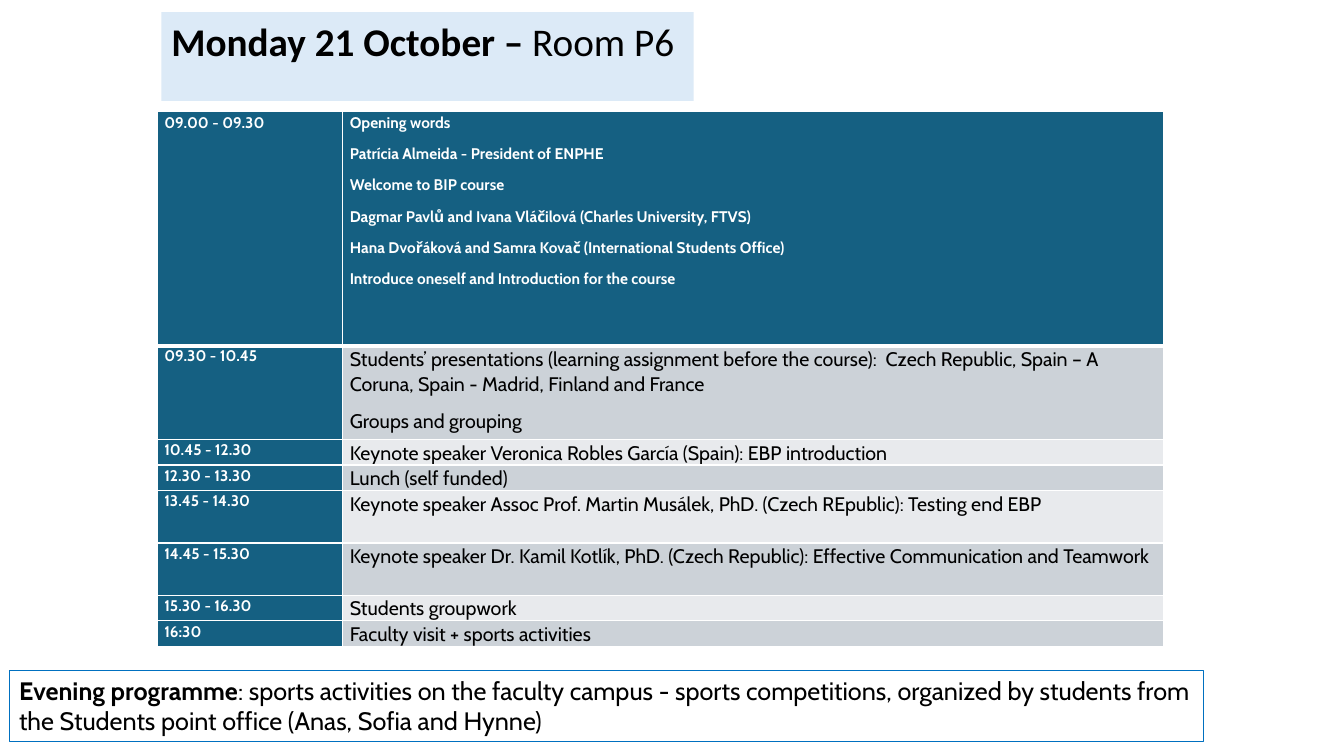
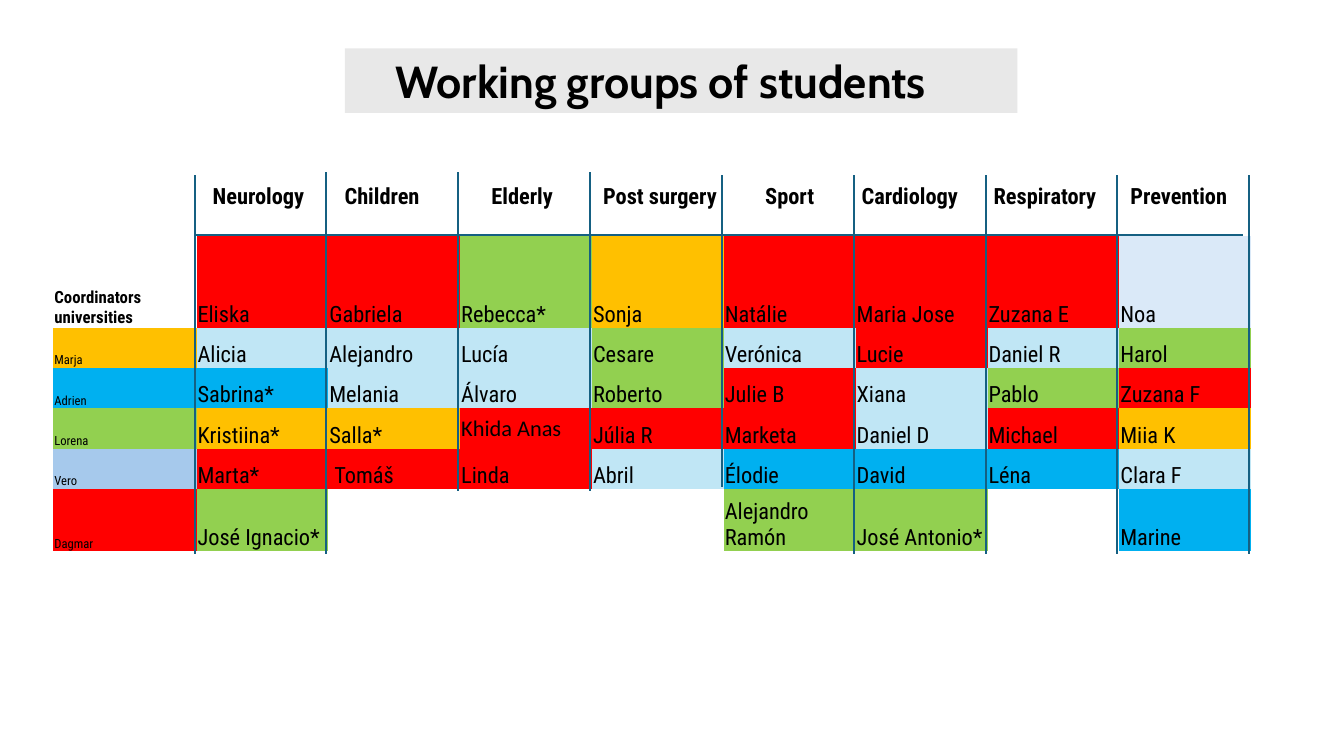
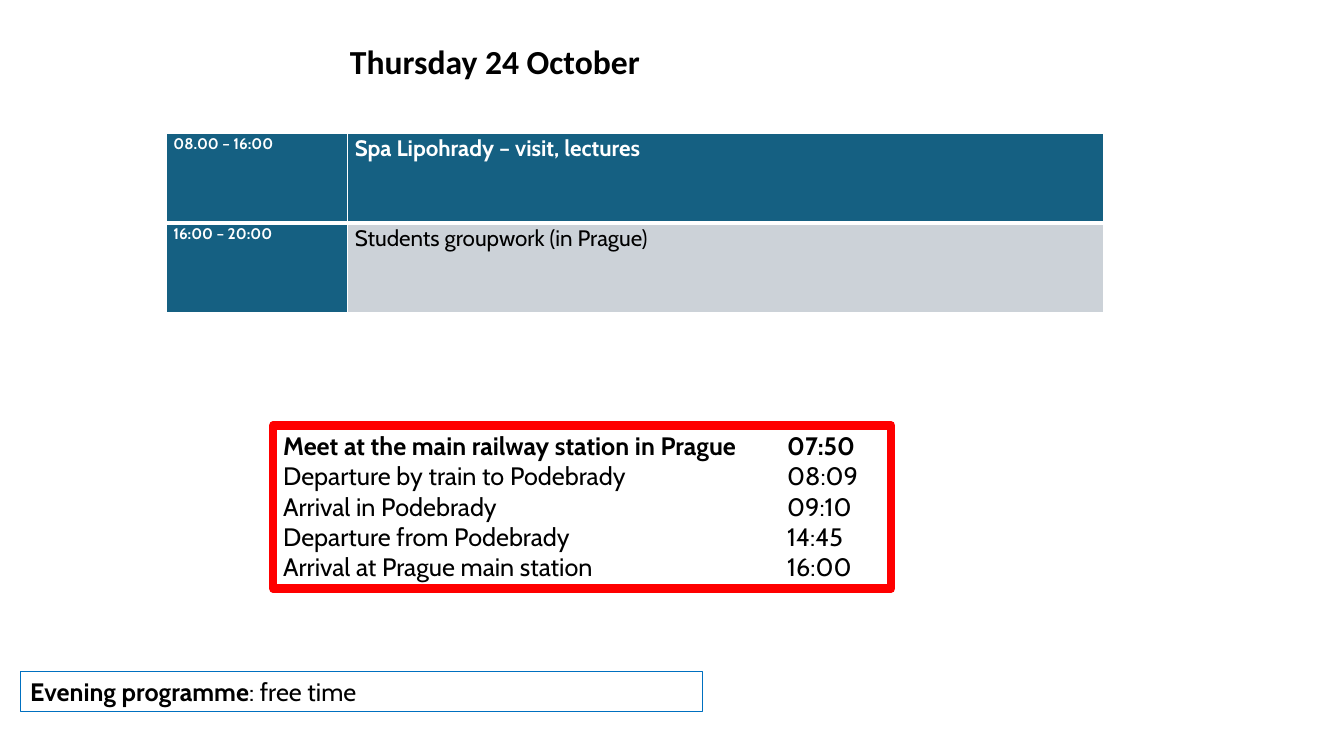
from lxml import etree
from pptx import Presentation
from pptx.dml.color import RGBColor
from pptx.enum import shapes, text
from pptx.oxml import ns
from pptx.util import Inches, Pt

COLORS = {
    "black": "000000", "white": "FFFFFF", "teal": "156082", "band": "CCD2D8",
    "pale": "E8EAED", "title_blue": "DCEAF7", "title_grey": "E8E8E8",
    "outline": "0070C0", "red": "FF0000", "green": "92D050", "amber": "FFC000",
    "sky": "C0E6F5", "blue": "00B0F0", "mist": "DAE9F8", "steel": "A6C9EC",
}
BODY, HEADING, GRID = "Cabin", "Calibri", "Roboto Condensed"
PLAIN_TABLE = "{2D5ABB26-0587-4C30-8999-92F81FD0307C}"

MONDAY = [
    (2.32, "09.00 - 09.30", [
        "Opening words",
        "Patrícia Almeida - President of ENPHE",
        "Welcome to BIP course",
        "Dagmar Pavlů and Ivana Vláčilová (Charles University, FTVS)",
        "Hana Dvořáková and Samra Kovač (International Students Office)",
        "Introduce oneself and Introduction for the course"]),
    (0.93, "09.30 - 10.45", [
        "Students’ presentations (learning assignment before the course):  "
        "Czech Republic, Spain – A Coruna, Spain - Madrid, Finland and France",
        "Groups and grouping"]),
    (0.25, "10.45 - 12.30", ["Keynote speaker Veronica Robles García (Spain): EBP introduction"]),
    (0.25, "12.30 - 13.30", ["Lunch (self funded)"]),
    (0.52, "13.45 - 14.30", [
        "Keynote speaker Assoc Prof. Martin Musálek, PhD. (Czech REpublic): Testing end EBP"]),
    (0.52, "14.45 - 15.30", [
        "Keynote speaker Dr. Kamil Kotlík, PhD. (Czech Republic): "
        "Effective Communication and Teamwork"]),
    (0.25, "15.30 - 16.30", ["Students groupwork"]),
    (0.25, "16:30", ["Faculty visit + sports activities"]),
]
MONDAY_EVENING = (
    ": sports activities on the faculty campus - sports competitions, organized by "
    "students from the Students point office (Anas, Sofia and Hynne)")

THURSDAY = [
    (0.89, "08.00 – 16:00", ["Spa Lipohrady – visit, lectures"]),
    (0.89, "16:00 – 20:00", ["Students groupwork (in Prague)"]),
]
TRAINS = [
    ("Meet at the main railway station in Prague", "07:50"),
    ("Departure by train to Podebrady", "08:09"),
    ("Arrival in Podebrady", "09:10"),
    ("Departure from Podebrady", "14:45"),
    ("Arrival at Prague main station", "16:00"),
]

TOPICS = [
    ("Neurology", 0.15), ("Children", 0.15), ("Elderly", 0.3), ("Post surgery", 0.1),
    ("Sport", 0.4), ("Cardiology", 0.05), ("Respiratory", 0.05), ("Prevention", 0.1),
]
GROUPS = [
    [("Coordinators universities", None), ("Eliska", "red"), ("Gabriela", "red"),
     ("Rebecca*", "green"), ("Sonja", "amber"), ("Natálie", "red"),
     ("Maria Jose", "red"), ("Zuzana E", "red"), ("Noa", "mist")],
    [("Marja", "amber"), ("Alicia", "sky"), ("Alejandro", "sky"), ("Lucía", "sky"),
     ("Cesare", "green"), ("Verónica", "sky"), ("Lucie", "red"), ("Daniel R", "sky"),
     ("Harol", "green")],
    [("Adrien", "blue"), ("Sabrina*", "blue"), ("Melania", "sky"), ("Álvaro", "sky"),
     ("Roberto", "green"), ("Julie B", "red"), ("Xiana", "sky"), ("Pablo", "green"),
     ("Zuzana F", "red")],
    [("Lorena", "green"), ("Kristiina*", "amber"), ("Salla*", "amber"),
     ("Khida Anas", "red"), ("Júlia R", "red"), ("Marketa", "red"),
     ("Daniel D", "sky"), ("Michael", "red"), ("Miia K", "amber")],
    [("Vero", "steel"), ("Marta*", "red"), ("Tomáš", "red"), ("Linda", "red"),
     ("Abril", "sky"), ("Élodie", "blue"), ("David", "blue"), ("Léna", "blue"),
     ("Clara F", "sky")],
    [("Dagmar", "red"), ("José Ignacio*", "green"), ("", None), ("", None), ("", None),
     ("Alejandro Ramón", "green"), ("José Antonio*", "green"), ("", None),
     ("Marine", "blue")],
    [("", None)] * 9,
]
GROUP_HEIGHTS = [0.89, 0.91, 0.4, 0.4, 0.4, 0.4, 0.62, 0.28]
COORDINATOR_WIDTH = 1.42
GROUP_WIDTH = (11.88 - COORDINATOR_WIDTH) / len(TOPICS)
RULE_SPANS = [(1.74, 5.5)] + [(1.71, 5.5)] + [(1.71, 4.87)] * 2 + [(1.74, 4.83)] + [(1.74, 5.5)] * 4


def rgb(color):
    return RGBColor.from_string(COLORS[color])


def style(font, name, size, color="black", bold=False):
    font.name, font.size, font.bold = name, Pt(size), bold
    font.color.rgb = rgb(color)


def paint(target, color):
    if color:
        target.fill.solid()
        target.fill.fore_color.rgb = rgb(color)
    else:
        target.fill.background()


def indent(paragraph, inches):
    paragraph._p.get_or_add_pPr().set("marL", str(Inches(inches)))


def add_slide(deck, title, at, size, font=HEADING, fill=None, extra="", left_indent=0):
    slide = deck.slides.add_slide(deck.slide_layouts[5])
    box = slide.shapes.title
    box.left, box.top, box.width, box.height = map(Inches, at)
    paint(box, fill)
    frame = box.text_frame
    frame.word_wrap = True
    frame.auto_size = text.MSO_AUTO_SIZE.NONE
    frame.vertical_anchor = text.MSO_ANCHOR.TOP
    frame.margin_right = 0
    paragraph = frame.paragraphs[0]
    paragraph.alignment = text.PP_ALIGN.LEFT
    indent(paragraph, left_indent)
    for words, bold in ((title, True), (extra, False)):
        if words:
            span = paragraph.add_run()
            span.text = words
            style(span.font, font, size, bold=bold)
    return slide


def add_frame(slide, at, color, width):
    box = slide.shapes.add_shape(shapes.MSO_SHAPE.RECTANGLE, *map(Inches, at))
    box.shadow.inherit = False
    box.fill.background()
    box.line.color.rgb = rgb(color)
    box.line.width = Pt(width)
    etree.SubElement(box.line._get_or_add_ln(), ns.qn("a:round"))
    box.text_frame.word_wrap = True
    box.text_frame.vertical_anchor = text.MSO_ANCHOR.TOP
    return box


def add_evening(slide, at, words):
    box = add_frame(slide, at, "outline", 0.75)
    para = box.text_frame.paragraphs[0]
    para.alignment = text.PP_ALIGN.LEFT
    for part, bold in (("Evening programme", True), (words, False)):
        span = para.add_run()
        span.text = part
        style(span.font, BODY, 18, bold=bold)


def add_grid(slide, left, top, widths, heights):
    table = slide.shapes.add_table(
        len(heights), len(widths), Inches(left), Inches(top),
        Inches(sum(widths)), Inches(sum(heights))).table
    table._tbl.tblPr.find(ns.qn("a:tableStyleId")).text = PLAIN_TABLE
    for column, width in zip(table.columns, widths):
        column.width = Inches(width)
    for row, height in zip(table.rows, heights):
        row.height = Inches(height)
    return table


def set_margins(cell, left, top, right, bottom):
    cell.margin_left, cell.margin_top = Inches(left), Inches(top)
    cell.margin_right, cell.margin_bottom = Inches(right), Inches(bottom)


def add_borders(cell, widths):
    properties = cell._tc.get_or_add_tcPr()
    for position, (side, width) in enumerate(widths.items()):
        line = etree.Element(ns.qn("a:" + side), w=str(Pt(width)))
        fill = etree.SubElement(line, ns.qn("a:solidFill"))
        etree.SubElement(fill, ns.qn("a:srgbClr"), val=COLORS["white"])
        properties.insert(position, line)


def add_schedule(slide, left, top, widths, schedule, head_size, body_size):
    table = add_grid(slide, left, top, widths, [height for height, _, _ in schedule])
    for row, (_, time, lines) in enumerate(schedule):
        header = row == 0
        body_fill = "teal" if header else ("band" if row % 2 else "pale")
        for column, (words, fill) in enumerate((([time], "teal"), (lines, body_fill))):
            cell = table.cell(row, column)
            paint(cell, fill)
            set_margins(cell, 0.07, 0, 0.07, 0)
            add_borders(cell, {"lnL": 1, "lnR": 1, "lnT": 3 if row == 1 else 1,
                               "lnB": 3 if header else 1})
            cell.text_frame.text = "\n".join(words)
            size = 11 if column == 0 else head_size if header else body_size
            on_teal = fill == "teal"
            for para in cell.text_frame.paragraphs:
                para.line_spacing = 1.07
                para.space_after = Pt(8)
                style(para.font, BODY, size, "white" if on_teal else "black", on_teal)


def fill_group_cell(cell, words, fill, size=16, bold=False, left_indent=0, bottom=0, font=GRID):
    paint(cell, fill)
    set_margins(cell, 0.01, 0.01, 0.01, bottom)
    cell.vertical_anchor = text.MSO_ANCHOR.BOTTOM
    cell.text_frame.text = words
    para = cell.text_frame.paragraphs[0]
    style(para.font, font, size, bold=bold)
    indent(para, left_indent)


def add_groups(slide):
    widths = [COORDINATOR_WIDTH] + [GROUP_WIDTH] * len(TOPICS)
    table = add_grid(slide, 0.53, 1.45, widths, GROUP_HEIGHTS)
    fill_group_cell(table.cell(0, 0), "", None)
    for column, (topic, left_indent) in enumerate(TOPICS, 1):
        fill_group_cell(table.cell(0, column), topic, None, bold=True,
                        left_indent=left_indent, bottom=0.26)
    for row, people in enumerate(GROUPS, 1):
        for column, (name, fill) in enumerate(people):
            cell = table.cell(row, column)
            heading = row == 1 and column == 0
            size = 12 if heading else 9 if column == 0 else 16
            fill_group_cell(cell, name, fill, size, heading,
                            0.05 if name == "Tomáš" else 0,
                            font=HEADING if name == "Khida Anas" else GRID)
            if name == "Khida Anas":
                cell.vertical_anchor = text.MSO_ANCHOR.MIDDLE


def add_rule(slide, *ends):
    rule = slide.shapes.add_connector(shapes.MSO_CONNECTOR.STRAIGHT, *map(Inches, ends))
    rule.line.color.rgb = rgb("teal")
    rule.line.width = Pt(1.5)
    etree.SubElement(rule._element.spPr, ns.qn("a:effectLst"))


def add_trains(slide):
    box = add_frame(slide, (2.71, 4.22, 6.13, 1.62), "red", 6)
    box.text_frame.text = "\n".join("\t".join(stop) for stop in TRAINS)
    for number, para in enumerate(box.text_frame.paragraphs):
        para.alignment = text.PP_ALIGN.LEFT
        style(para.font, BODY, 18, bold=number == 0)
        tabs = etree.Element(ns.qn("a:tabLst"))
        etree.SubElement(tabs, ns.qn("a:tab"), pos=str(Inches(5)), algn="l")
        para._p.pPr.find(ns.qn("a:defRPr")).addprevious(tabs)


def main():
    deck = Presentation()
    deck.slide_width, deck.slide_height = Inches(13.33), Inches(7.5)

    monday = add_slide(deck, "Monday 21 October – ", (1.6, 0.12, 5.28, 0.88), 28,
                       fill="title_blue", extra="Room P6")
    add_schedule(monday, 1.56, 1.11, (1.84, 8.14), MONDAY, 11, 14)
    add_evening(monday, (0.09, 6.65, 11.85, 0.71), MONDAY_EVENING)

    groups = add_slide(deck, "Working groups of students", (3.42, 0.48, 6.67, 0.64), 32,
                       font=BODY, fill="title_grey", left_indent=0.4)
    add_groups(groups)
    for number, (top, bottom) in enumerate(RULE_SPANS):
        x = 1.93 + number * GROUP_WIDTH
        add_rule(groups, x, top, x, bottom)
    add_rule(groups, 1.93, 2.33, 12.33, 2.33)

    thursday = add_slide(deck, "Thursday 24 October", (3.37, 0.36, 3.1, 0.81), 24)
    add_schedule(thursday, 1.65, 1.32, (1.8, 7.5), THURSDAY, 16, 16)
    add_trains(thursday)
    add_evening(thursday, (0.2, 6.66, 6.77, 0.4), ": free time")

    deck.save("out.pptx")


if __name__ == "__main__":
    main()
